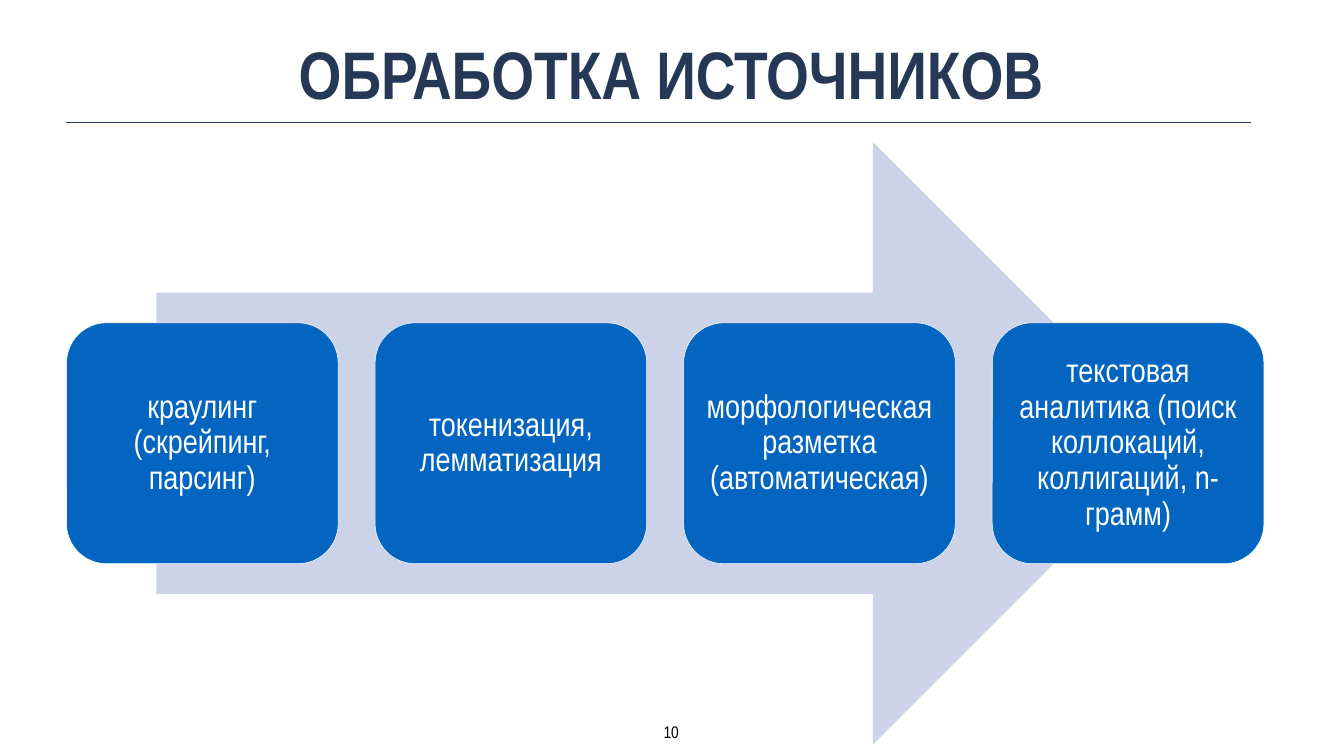
from lxml import etree
from pptx import Presentation
from pptx.dml.color import RGBColor
from pptx.enum import shapes, text
from pptx.oxml.ns import qn
from pptx.util import Inches, Pt

FONT = "Arial Narrow"
COLORS = {"navy": "253957", "blue": "0365C0", "pale": "CCD3E8",
          "white": "FFFFFF", "black": "000000"}
STEPS = [
    "краулинг (скрейпинг, парсинг)",
    "токенизация, лемматизация",
    "морфологическая разметка (автоматическая)",
    "текстовая аналитика (поиск коллокаций, коллигаций, n-грамм)",
]


def color(name):
    return RGBColor.from_string(COLORS[name])


def write(shape, words, size, ink, inset, bold=False, wrap=True,
          anchor=text.MSO_ANCHOR.TOP):
    frame = shape.text_frame
    frame.word_wrap = wrap
    frame.vertical_anchor = anchor
    frame.margin_left = frame.margin_right = Inches(inset)
    frame.margin_top = frame.margin_bottom = Inches(inset)
    para = frame.paragraphs[0]
    para.text = words
    para.alignment = text.PP_ALIGN.CENTER
    para.font.name = FONT
    para.font.size = Pt(size)
    para.font.bold = bold
    para.font.color.rgb = color(ink)
    return para


def add_block(page, kind, left, top, width, height, fill):
    block = page.shapes.add_shape(kind, Inches(left), Inches(top),
                                  Inches(width), Inches(height))
    block.shadow.inherit = False
    block.fill.solid()
    block.fill.fore_color.rgb = color(fill)
    return block


def add_header(page, left, top, width):
    # Title
    title = page.shapes.add_textbox(Inches(left + 0.25), Inches(top),
                                    Inches(width), Inches(1.45))
    write(title, "ОБРАБОТКА ИСТОЧНИКОВ", 96, "navy", 0.08, bold=True)

    # Rule under the title
    rule_top = Inches(top + 1.85)
    rule = page.shapes.add_connector(shapes.MSO_CONNECTOR.STRAIGHT, Inches(left),
                                     rule_top, Inches(left + width), rule_top)
    rule.line.color.rgb = color("navy")
    rule.line.width = Pt(1)
    etree.SubElement(rule._element.spPr, qn("a:effectLst"))


def add_process(page, left, top, width, height):
    # Background arrow, 85% of the width and centred
    arrow_width = 0.85 * width
    arrow = add_block(page, shapes.MSO_SHAPE.RIGHT_ARROW,
                      left + (width - arrow_width) / 2, top,
                      arrow_width, height, "pale")
    arrow.line.fill.background()

    # Step cards, evenly spread and 40% of the arrow's height
    card_width, card_height = 5.39, 0.4 * height
    pitch = (width - card_width) / (len(STEPS) - 1)
    for index, words in enumerate(STEPS):
        card = add_block(page, shapes.MSO_SHAPE.ROUNDED_RECTANGLE,
                         left + index * pitch, top + (height - card_height) / 2,
                         card_width, card_height, "blue")
        card.line.color.rgb = color("white")
        card.line.width = Pt(0.75)
        para = write(card, words, 47, "white", 0.2, anchor=text.MSO_ANCHOR.MIDDLE)
        para.line_spacing = 0.9


def add_page_number(page, left, top):
    box = page.shapes.add_textbox(Inches(left), Inches(top),
                                  Inches(0.54), Inches(0.56))
    write(box, "10", 24, "black", 0.08, wrap=False)


def main():
    deck = Presentation()
    deck.slide_width, deck.slide_height = Inches(26.67), Inches(15)
    page = deck.slides.add_slide(deck.slide_layouts[6])
    add_header(page, 1.31, 0.57, 23.52)
    add_page_number(page, 13.05, 14.23)
    add_process(page, 1.32, 2.82, 23.76, 11.95)
    deck.save("out.pptx")


if __name__ == "__main__":
    main()
